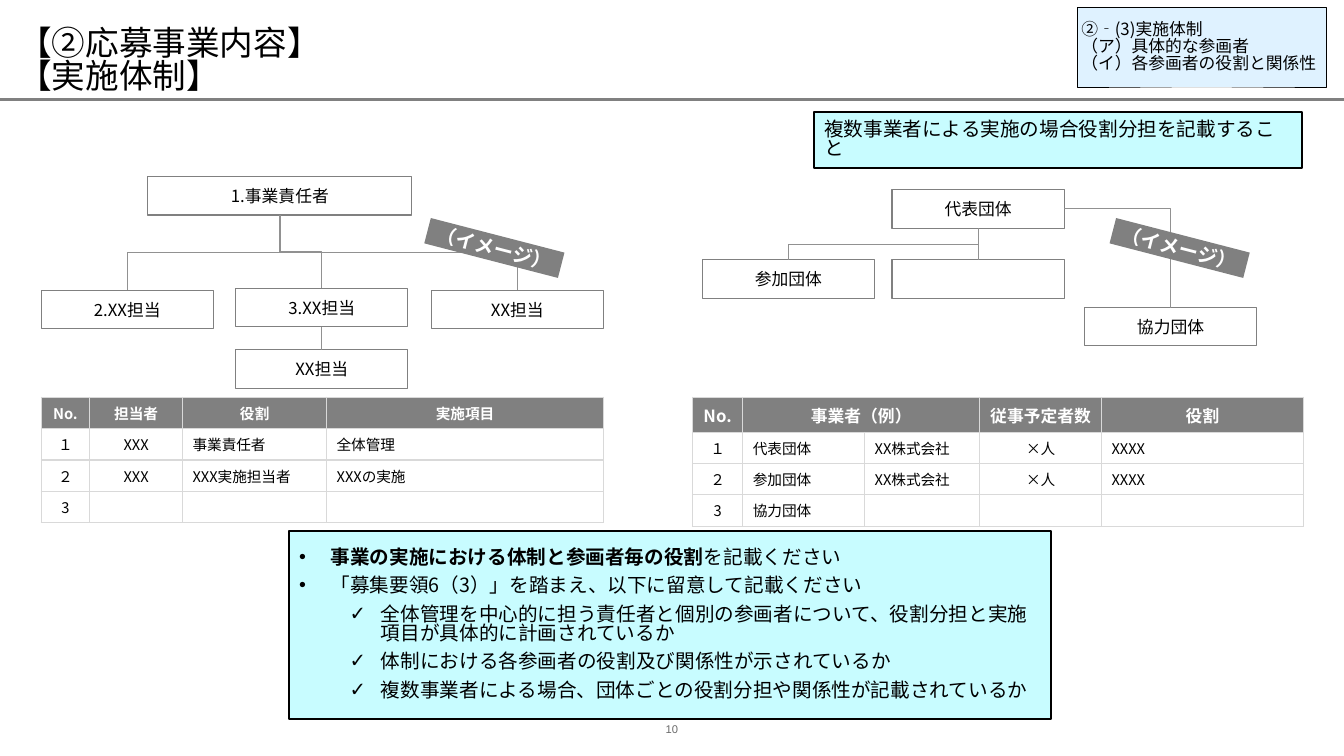
from lxml import etree
from pptx import Presentation
from pptx import util as u
from pptx.dml.color import RGBColor
from pptx.enum import shapes, text
from pptx.oxml import ns

FONT = "Noto Sans CJK JP"
BLACK, WHITE, GRAY, LINE, BORDER = "000000", "FFFFFF", "808080", "919191", "D9D9D9"
CYAN, PALE_BLUE = "C8FCFF", "DFF2FF"
LEFT, CENTER = text.PP_ALIGN.LEFT, text.PP_ALIGN.CENTER
TIGHT = 0.84  # line spacing of wrapped text

TITLE = ["【②応募事業内容】", "【実施体制】"]
CRITERIA = ["②‐(3)実施体制", "（ア）具体的な参画者", "（イ）各参画者の役割と関係性"]
SHARING_NOTE = "複数事業者による実施の場合役割分担を記載すること"

# name: (label, left, top, width)
BOX_WIDTH, BOX_HEIGHT = 4.34, 0.97
BOXES = {
    "lead": ("代表団体", 22.48, 4.78, BOX_WIDTH),
    "blank": ("", 22.48, 6.55, BOX_WIDTH),
    "member": ("参加団体", 17.7, 6.55, BOX_WIDTH),
    "partner": ("協力団体", 27.33, 7.75, BOX_WIDTH),
    "manager": ("1.事業責任者", 3.73, 4.45, 6.65),
    "second": ("2.XX担当", 1.04, 7.32, BOX_WIDTH),
    "third": ("3.XX担当", 5.94, 7.26, BOX_WIDTH),
    "fourth": ("XX担当", 10.87, 7.32, BOX_WIDTH),
    "sub": ("XX担当", 5.94, 8.81, BOX_WIDTH),
}
REPORTS = [("lead", "blank"), ("lead", "member"), ("manager", "second"),
           ("manager", "third"), ("manager", "fourth"), ("third", "sub")]

ROW_HEIGHT = 0.79
# left, header height, header size, column widths, centred columns, rows
TABLES = [
    (17.45, 0.88, 12, [1.27, 3.07, 2.9, 3.07, 5.08], {0, 3}, [
        ["No.", "事業者（例）", None, "従事予定者数", "役割"],
        ["１", "代表団体", "XX株式会社", "×人", "XXXX"],
        ["２", "参加団体", "XX株式会社", "×人", "XXXX"],
        ["3", "協力団体", "", "", ""]]),
    (1.04, ROW_HEIGHT, 10.5, [1.22, 2.34, 3.63, 6.98], {0, 1}, [
        ["No.", "担当者", "役割", "実施項目"],
        ["１", "XXX", "事業責任者", "全体管理"],
        ["２", "XXX", "XXX実施担当者", "XXXの実施"],
        ["3", "", "", ""]]),
]
TABLE_TOP = 10.01

# level, [(text, bold)]
GUIDANCE = [
    (0, [("事業の実施における体制と参画者毎の役割", True), ("を記載ください", False)]),
    (0, [("「募集要領6（3）」を踏まえ、以下に留意して記載ください", False)]),
    (1, [("全体管理を中心的に担う責任者と個別の参画者について、"
          "役割分担と実施項目が具体的に計画されているか", False)]),
    (1, [("体制における各参画者の役割及び関係性が示されているか", False)]),
    (1, [("複数事業者による場合、団体ごとの役割分担や関係性が記載されているか", False)]),
]
BULLETS, INDENTS, HANGING = "•✓", [0.79, 2.06], 0.79

STAMP = "（イメージ）"
STAMP_LEFTS = [10.72, 27.99]


def rgb(value):
    return RGBColor.from_string(value)


def cm(*values):
    return [u.Cm(value) for value in values]


def add_run(paragraph, words, size, color=BLACK, bold=False, font=FONT):
    run = paragraph.add_run()
    run.text = words
    run.font.size, run.font.bold, run.font.name = u.Pt(size), bold, font
    run.font.color.rgb = rgb(color)
    etree.SubElement(run._r.rPr, ns.qn("a:ea"), typeface=font)


def add_box(place, fill=None, line=None, width=0.75):
    shape = slide.shapes.add_shape(shapes.MSO_SHAPE.RECTANGLE, *cm(*place))
    shape.shadow.inherit = False
    if fill:
        shape.fill.solid()
        shape.fill.fore_color.rgb = rgb(fill)
    else:
        shape.fill.background()
    if line:
        shape.line.color.rgb = rgb(line)
        shape.line.width = u.Pt(width)
    else:
        shape.line.fill.background()
    shape.text_frame.word_wrap = True
    shape.text_frame.vertical_anchor = text.MSO_ANCHOR.MIDDLE
    return shape


def next_paragraph(frame, index, align=LEFT, spacing=TIGHT):
    paragraph = frame.add_paragraph() if index else frame.paragraphs[0]
    paragraph.alignment, paragraph.line_spacing = align, spacing
    return paragraph


def add_line(kind, start, end, color=LINE, width=0.75):
    line = slide.shapes.add_connector(kind, *cm(*start, *end))
    line.line.color.rgb = rgb(color)
    line.line.width = u.Pt(width)
    etree.SubElement(line._element.spPr, ns.qn("a:effectLst"))
    return line


def link_down(parent, child):
    """Join the bottom of one box to the top of another, bending halfway."""
    _, left, top, width = BOXES[parent]
    x1, y1 = left + width / 2, top + BOX_HEIGHT
    _, left, y2, width = BOXES[child]
    x2 = left + width / 2
    if abs(x1 - x2) < 0.01:
        add_line(shapes.MSO_CONNECTOR.STRAIGHT, (x1, y1), (x2, y2))
        return
    # An elbow leaves sideways, so it is laid flat about its middle and turned
    middle_x, middle_y = (x1 + x2) / 2, (y1 + y2) / 2
    half_w, half_h = (y2 - y1) / 2, abs(x2 - x1) / 2
    side = 1 if x2 < x1 else -1
    elbow = add_line(shapes.MSO_CONNECTOR.ELBOW,
                     (middle_x - side * half_w, middle_y - half_h),
                     (middle_x + side * half_w, middle_y + half_h))
    turn = 90 if side == 1 else 270
    elbow._element.spPr.find(ns.qn("a:xfrm")).set("rot", str(turn * 60000))


def set_borders(cell):
    properties = cell._tc.get_or_add_tcPr()
    for index, edge in enumerate(("lnL", "lnR", "lnT", "lnB")):
        line = etree.Element(ns.qn("a:" + edge), w=str(u.Pt(1)))
        fill = etree.SubElement(line, ns.qn("a:solidFill"))
        etree.SubElement(fill, ns.qn("a:srgbClr"), val=BORDER)
        properties.insert(index, line)


def add_grid(left, header_height, header_size, widths, centred, rows):
    heights = [header_height] + [ROW_HEIGHT] * (len(rows) - 1)
    table = slide.shapes.add_table(len(rows), len(widths), *cm(
        left, TABLE_TOP, sum(widths), sum(heights))).table
    for column, width in zip(table.columns, widths):
        column.width = u.Cm(width)
    for r, (row, height) in enumerate(zip(rows, heights)):
        table.rows[r].height = u.Cm(height)
        header = r == 0
        size = header_size if header else 10.5
        for c, words in enumerate(row):
            cell = table.cell(r, c)
            cell.vertical_anchor = text.MSO_ANCHOR.MIDDLE
            if header:
                cell.fill.solid()
                cell.fill.fore_color.rgb = rgb(GRAY)
            else:
                cell.fill.background()
            set_borders(cell)
            paragraph = cell.text_frame.paragraphs[0]
            paragraph.alignment = CENTER if header or c in centred else LEFT
            if words:
                add_run(paragraph, words, size, WHITE if header else BLACK, header)
            else:
                etree.SubElement(paragraph._p, ns.qn("a:endParaRPr"), sz=str(int(size * 100)))
            if words is None:
                table.cell(r, c - 1).merge(cell)


presentation = Presentation()
presentation.slide_width, presentation.slide_height = cm(33.87, 19.05)
slide = presentation.slides.add_slide(presentation.slide_layouts[5])

title = slide.shapes.title
title.left, title.top, title.width, title.height = cm(0.46, 0, 33.4, 2.41)
frame = title.text_frame
frame.margin_left = frame.margin_right = frame.margin_top = frame.margin_bottom = 0
frame.vertical_anchor = text.MSO_ANCHOR.BOTTOM
frame.auto_size = text.MSO_AUTO_SIZE.NONE
paragraph = next_paragraph(frame, 0, spacing=0.82)
add_run(paragraph, TITLE[0], 24)
paragraph.add_line_break()
add_run(paragraph, TITLE[1], 24)
add_line(shapes.MSO_CONNECTOR.STRAIGHT, (0, 2.51), (33.87, 2.51), GRAY, 2.25)

page_number = slide.shapes.add_textbox(*cm(16.51, 18.24, 0.84, 0.25)).text_frame
page_number.margin_left = page_number.margin_right = 0
page_number.margin_top = page_number.margin_bottom = 0
page_number.vertical_anchor = text.MSO_ANCHOR.MIDDLE
add_run(next_paragraph(page_number, 0, CENTER, 1.0), "10", 8, "6B6B6B", font="Arial")

for grid in TABLES:
    add_grid(*grid)

for label, left, top, width in BOXES.values():
    box = add_box((left, top, width, BOX_HEIGHT), line=GRAY)
    if label:
        add_run(next_paragraph(box.text_frame, 0, CENTER, 1.0), label, 12)
for parent, child in REPORTS:
    link_down(parent, child)
_, lead_left, lead_top, lead_width = BOXES["lead"]
_, partner_left, partner_top, partner_width = BOXES["partner"]
corner = add_line(shapes.MSO_CONNECTOR.ELBOW,
                  (lead_left + lead_width, lead_top + BOX_HEIGHT / 2),
                  (partner_left + partner_width / 2, partner_top))
corner._element.spPr.find(ns.qn("a:prstGeom")).set("prst", "bentConnector2")

note = add_box((20.52, 2.82, 12.29, 1.42), CYAN, BLACK, 1.5)
add_run(next_paragraph(note.text_frame, 0), SHARING_NOTE, 14)

guidance = add_box((7.29, 13.39, 19.2, 4.72), CYAN, BLACK, 1.5)
for index, (level, runs) in enumerate(GUIDANCE):
    paragraph = next_paragraph(guidance.text_frame, index)
    paragraph.level = level
    paragraph.space_before = u.Pt(6 if index else 0)
    properties = paragraph._p.get_or_add_pPr()
    properties.set("marL", str(u.Cm(INDENTS[level])))
    properties.set("indent", str(u.Cm(-HANGING)))
    etree.SubElement(properties, ns.qn("a:buFont"), typeface="Arial")
    etree.SubElement(properties, ns.qn("a:buChar"), char=BULLETS[level])
    for words, bold in runs:
        add_run(paragraph, words, 14, bold=bold)

for left in STAMP_LEFTS:
    stamp = add_box((left, 5.92, 3.48, 0.66), GRAY)
    stamp.rotation = 14.5
    stamp.text_frame.word_wrap = False
    add_run(next_paragraph(stamp.text_frame, 0, CENTER, 1.0), STAMP, 14, WHITE, True)

criteria = add_box((27.15, 0.18, 6.27, 2.01), PALE_BLUE, BLACK, 0.25)
frame = criteria.text_frame
frame.margin_left = frame.margin_right = frame.margin_top = frame.margin_bottom = u.Cm(0.1)
for index, words in enumerate(CRITERIA):
    add_run(next_paragraph(frame, index), words, 12)

presentation.save("out.pptx")
